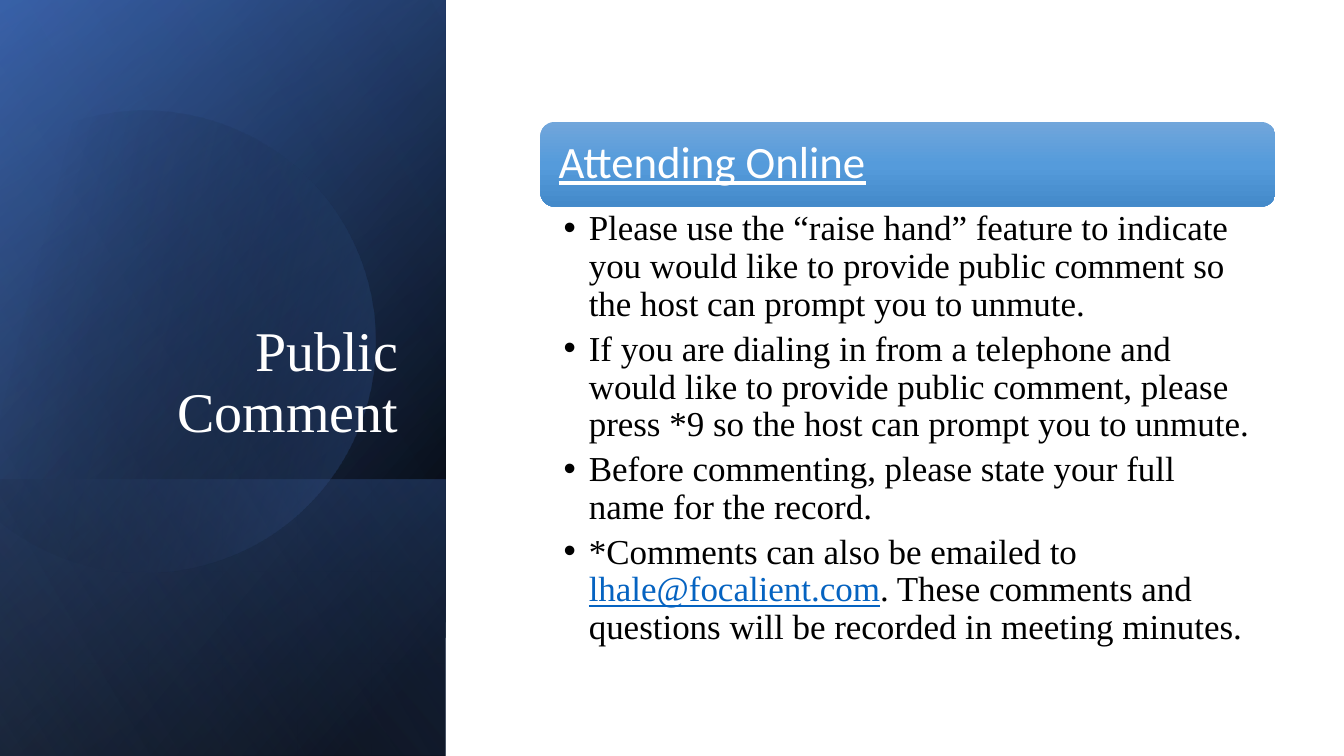
from math import cos, radians, sin, tan

from lxml import etree
from pptx import Presentation
from pptx.dml.color import RGBColor
from pptx.enum.shapes import MSO_SHAPE
from pptx.enum.text import MSO_ANCHOR, MSO_AUTO_SIZE, PP_ALIGN
from pptx.oxml.ns import qn
from pptx.util import Inches, Pt

RECT, ROUNDED = MSO_SHAPE.RECTANGLE, MSO_SHAPE.ROUNDED_RECTANGLE
TOP, MIDDLE, BOTTOM = MSO_ANCHOR.TOP, MSO_ANCHOR.MIDDLE, MSO_ANCHOR.BOTTOM
LEFT, RIGHT = PP_ALIGN.LEFT, PP_ALIGN.RIGHT
NO_FIT = MSO_AUTO_SIZE.NONE

COLORS = {
    "white": "FFFFFF", "black": "000000", "navy": "2F5597", "blue": "4472C4",
    "pale": "8FAADC", "link": "0563C1", "bar_top": "71A6DB",
    "bar_middle": "559BDB", "bar_bottom": "448ACA",
}
SERIF, SANS = "Times New Roman", "Calibri"

TITLE = "Public Comment"
HEADING = "Attending Online"
BULLETS = [
    [("Please use the “raise hand” feature to indicate you would like to provide "
      "public comment so the host can prompt you to unmute.", "black")],
    [("If you are dialing in from a telephone and would like to provide public "
      "comment, please press *9 so the host can prompt you to unmute.", "black")],
    [("Before commenting, please state your full name for the record.", "black")],
    [("*Comments can also be emailed to ", "black"),
     ("lhale@focalient.com", "link"),
     (". These comments and questions will be recorded in meeting minutes.", "black")],
]

PANEL_WIDTH, PANEL_HEIGHT, BAND_HEIGHT = 4.42, 7.5, 2.74
PANELS = [
    (PANEL_HEIGHT, 50, [(8, "black", 100), (100, "navy", 100)]),
    (PANEL_HEIGHT, 30, [(0, "black", 0), (99, "blue", 46)]),
    (BAND_HEIGHT, 130, [(2, "blue", 29), (100, "black", 30)]),
]
SHEEN = (PANEL_HEIGHT, 120, [(0, "black", 0), (99, "pale", 11)])
DISC_STOPS = [(29, "black", 0), (100, "blue", 43)]
DISC_CENTER, DISC_RADIUS, DISC_TURN = (1.43, 3.34), 2.29, 343.9
DISC_ANGLES = [-117, -90, 0, 90, 149]
BAR_STOPS = [(0, "bar_top", 100), (50, "bar_middle", 100), (100, "bar_bottom", 100)]


def fill_gradient(shape, angle, stops):
    shape.shadow.inherit = False
    shape.line.fill.background()
    shape.fill.background()
    gradient = etree.Element(qn("a:gradFill"), rotWithShape="1")
    stop_list = etree.SubElement(gradient, qn("a:gsLst"))
    for position, color, opacity in stops:
        stop = etree.SubElement(stop_list, qn("a:gs"), pos=str(position * 1000))
        tint = etree.SubElement(stop, qn("a:srgbClr"), val=COLORS[color])
        if opacity < 100:
            etree.SubElement(tint, qn("a:alpha"), val=str(opacity * 1000))
    etree.SubElement(gradient, qn("a:lin"), ang=str(angle * 60000), scaled="0")
    properties = shape._element.spPr
    properties.replace(properties.find(qn("a:noFill")), gradient)


def add_panel(page, height, angle, stops):
    left = (PANEL_WIDTH - height) / 2
    top = PANEL_HEIGHT - (height + PANEL_WIDTH) / 2
    panel = page.shapes.add_shape(
        RECT, Inches(left), Inches(top), Inches(height), Inches(PANEL_WIDTH))
    panel.rotation = 90
    panel._element.spPr.xfrm.set("flipH", "1")
    fill_gradient(panel, angle, stops)


def disc_point(degree, pull=0):
    angle = radians(degree)
    x = DISC_CENTER[0] + DISC_RADIUS * (cos(angle) - pull * sin(angle))
    y = DISC_CENTER[1] + DISC_RADIUS * (sin(angle) + pull * cos(angle))
    return Inches(x), Inches(y)


def add_disc(page):
    points = [disc_point(degree) for degree in DISC_ANGLES]
    builder = page.shapes.build_freeform(*points[0])
    builder.add_line_segments(points[1:], close=True)
    disc = builder.convert_to_shape()
    lines = list(disc._element.iter(qn("a:lnTo")))
    for line, start, end in zip(lines, DISC_ANGLES, DISC_ANGLES[1:]):
        pull = 4 / 3 * tan(radians(end - start) / 4)
        curve = etree.Element(qn("a:cubicBezTo"))
        for x, y in (disc_point(start, pull), disc_point(end, -pull), disc_point(end)):
            etree.SubElement(curve, qn("a:pt"), x=str(x - disc.left), y=str(y - disc.top))
        line.getparent().replace(line, curve)
    disc.rotation = DISC_TURN
    fill_gradient(disc, 30, DISC_STOPS)


def format_frame(frame, anchor, margins):
    left, top, right, bottom = (Inches(margin) for margin in margins)
    values = {"word_wrap": True, "auto_size": NO_FIT, "vertical_anchor": anchor,
              "margin_left": left, "margin_top": top,
              "margin_right": right, "margin_bottom": bottom}
    for name, value in values.items():
        setattr(frame, name, value)


def write_paragraph(para, spans, font, size, align=LEFT, underlined=False):
    para.alignment = align
    para.line_spacing = 0.9
    for text, color in spans:
        span = para.add_run()
        span.text = text
        values = {"name": font, "size": Pt(size),
                  "underline": underlined or color == "link"}
        for name, value in values.items():
            setattr(span.font, name, value)
        span.font.color.rgb = RGBColor.from_string(COLORS[color])


def add_bullet(para):
    properties = para._p.get_or_add_pPr()
    properties.set("marL", str(Inches(0.25)))
    properties.set("indent", str(-Inches(0.25)))
    etree.SubElement(properties, qn("a:buFont"), typeface="Arial")
    etree.SubElement(properties, qn("a:buChar"), char="•")


def place_title(page):
    title = page.shapes.title
    page.shapes._spTree.append(title._element)
    place = {"left": 0.64, "top": 1.84, "width": 3.41, "height": 2.62}
    for name, value in place.items():
        setattr(title, name, Inches(value))
    format_frame(title.text_frame, BOTTOM, (0.1, 0.05, 0.1, 0.05))
    write_paragraph(title.text_frame.paragraphs[0], [(TITLE, "white")], SERIF, 40, RIGHT)


def add_instructions(page):
    group = page.shapes.add_group_shape()
    bar = group.shapes.add_shape(
        ROUNDED, Inches(5.36), Inches(1.21), Inches(7.29), Inches(0.84))
    fill_gradient(bar, 90, BAR_STOPS)

    heading = group.shapes.add_textbox(
        Inches(5.41), Inches(1.25), Inches(7.21), Inches(0.76))
    format_frame(heading.text_frame, MIDDLE, (0.13, 0.13, 0.13, 0.13))
    write_paragraph(heading.text_frame.paragraphs[0], [(HEADING, "white")],
                    SANS, 32, underlined=True)

    box = group.shapes.add_textbox(
        Inches(5.36), Inches(2.05), Inches(7.29), Inches(4.35))
    frame = box.text_frame
    format_frame(frame, TOP, (0.23, 0.04, 0.25, 0.04))
    for index, spans in enumerate(BULLETS):
        para = frame.add_paragraph() if index else frame.paragraphs[0]
        add_bullet(para)
        para.space_after = Pt(5)
        write_paragraph(para, spans, SERIF, 25)


def main():
    deck = Presentation()
    deck.slide_width, deck.slide_height = Inches(13.33), Inches(7.5)
    page = deck.slides.add_slide(deck.slide_layouts[5])
    for panel in PANELS:
        add_panel(page, *panel)
    add_disc(page)
    add_panel(page, *SHEEN)
    place_title(page)
    add_instructions(page)
    deck.save("out.pptx")


if __name__ == "__main__":
    main()
